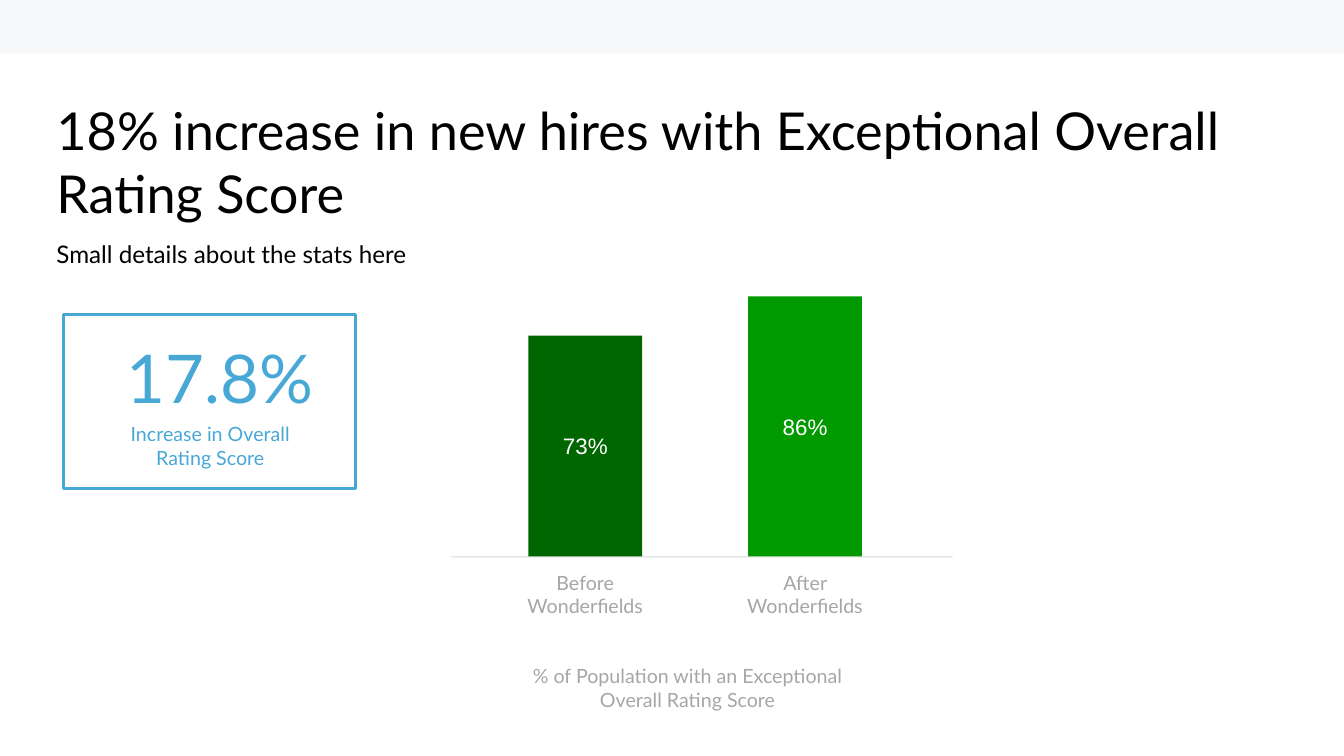
from dataclasses import dataclass

from pptx import Presentation
from pptx.dml.color import RGBColor
from pptx.enum.shapes import MSO_SHAPE
from pptx.enum.text import MSO_ANCHOR, MSO_AUTO_SIZE, PP_ALIGN
from pptx.shapes.base import BaseShape
from pptx.shapes.shapetree import _BaseGroupShapes
from pptx.text.text import TextFrame
from pptx.util import Inches, Pt

RECT = MSO_SHAPE.RECTANGLE
LEFT, CENTER = PP_ALIGN.LEFT, PP_ALIGN.CENTER
TOP, MIDDLE = MSO_ANCHOR.TOP, MSO_ANCHOR.MIDDLE
GROW, FIXED = MSO_AUTO_SIZE.SHAPE_TO_FIT_TEXT, MSO_AUTO_SIZE.NONE


@dataclass(frozen=True)
class Theme:
    font: str = "Lato"
    bar_font: str = "Arial"
    black: str = "000000"
    white: str = "FFFFFF"
    grey: str = "A6A6A6"
    blue: str = "47A8D6"
    band: str = "F7F8F9"
    axis: str = "D9D9D9"
    title_size: float = 37.3
    subtitle_size: float = 17.3
    stat_size: float = 48
    bar_size: float = 16
    label_size: float = 14


THEME = Theme()
PADDING = (0.13, 0.07)
BASELINE = 5.52
BAR_WIDTH = 1.13
FULL_BAR_HEIGHT = 3.0  # height of a 100% bar


@dataclass(frozen=True)
class Label:
    text: str
    box: tuple[float, float, float, float]
    size: float
    color: str
    align: PP_ALIGN = CENTER
    padding: tuple[float, float] = PADDING
    auto_size: MSO_AUTO_SIZE = GROW


@dataclass(frozen=True)
class Bar:
    name: str
    percent: int
    left: float
    color: str
    label_width: float


TITLE = Label("18% increase in new hires with Exceptional Overall Rating Score",
              (0.56, 0.98, 12.17, 0.84), THEME.title_size, THEME.black, LEFT, (0, 0), FIXED)
SUBTITLE = Label("Small details about the stats here",
                 (0.49, 2.3, 10.93, 0.44), THEME.subtitle_size, THEME.black, LEFT, (0.07, 0.07))
CHART_CAPTION = Label("% of Population with an Exceptional Overall Rating Score",
                      (4.92, 6.52, 3.8, 0.61), THEME.label_size, THEME.grey)
STAT_LABELS = (
    Label("17.8%", (1.13, 3.27, 2.27, 0.94), THEME.stat_size, THEME.blue, LEFT),
    Label("Increase in Overall Rating Score",
          (1.04, 4.12, 2.09, 0.61), THEME.label_size, THEME.blue),
)
BARS = (
    Bar("Before Wonderfields", 73, 5.24, "006600", 1.7),
    Bar("After Wonderfields", 86, 7.42, "009900", 1.47),
)


def rgb(color: str) -> RGBColor:
    return RGBColor.from_string(color)


def set_text(tf: TextFrame, text: str, size: float, color: str, font: str,
             align: PP_ALIGN, anchor: MSO_ANCHOR, padding: tuple[float, float]) -> None:
    tf.text = text
    tf.word_wrap = True
    tf.vertical_anchor = anchor
    tf.margin_left = tf.margin_right = Inches(padding[0])
    tf.margin_top = tf.margin_bottom = Inches(padding[1])
    p = tf.paragraphs[0]
    p.alignment = align
    r = p.runs[0]
    r.font.name = font
    r.font.size = Pt(size)
    r.font.color.rgb = rgb(color)


def add_label(shapes: _BaseGroupShapes, label: Label) -> None:
    tf = shapes.add_textbox(*map(Inches, label.box)).text_frame
    set_text(tf, label.text, label.size, label.color, THEME.font,
             label.align, TOP, label.padding)
    tf.auto_size = label.auto_size


def fill_plain(sp: BaseShape, color: str) -> None:
    sp.shadow.inherit = False
    sp.fill.solid()
    sp.fill.fore_color.rgb = rgb(color)
    sp.line.fill.background()


def add_axis(shapes: _BaseGroupShapes) -> None:
    points = [(4.5, 5.53), (9.46, 5.53), (9.44, BASELINE)]
    builder = shapes.build_freeform(Inches(4.46), Inches(BASELINE))
    builder.add_line_segments([(Inches(x), Inches(y)) for x, y in points], close=True)
    fill_plain(builder.convert_to_shape(), THEME.axis)


def add_bar(shapes: _BaseGroupShapes, bar: Bar) -> None:
    """Draw a bar standing on the baseline, with its name centred below."""
    height = FULL_BAR_HEIGHT * bar.percent / 100
    sp = shapes.add_shape(RECT, Inches(bar.left), Inches(BASELINE - height),
                          Inches(BAR_WIDTH), Inches(height))
    fill_plain(sp, bar.color)
    set_text(sp.text_frame, f"{bar.percent}%", THEME.bar_size, THEME.white,
             THEME.bar_font, CENTER, MIDDLE, PADDING)
    label_left = bar.left + (BAR_WIDTH - bar.label_width) / 2
    add_label(shapes, Label(bar.name, (label_left, 5.66, bar.label_width, 0.47),
                            THEME.label_size, THEME.grey, padding=(0, 0)))


def add_stat_card(shapes: _BaseGroupShapes) -> None:
    card = shapes.add_group_shape().shapes
    for label in STAT_LABELS:
        add_label(card, label)
    frame = card.add_shape(RECT, Inches(0.63), Inches(3.12), Inches(2.9), Inches(1.73))
    frame.shadow.inherit = False
    frame.fill.background()
    frame.line.color.rgb = rgb(THEME.blue)
    frame.line.width = Pt(2)


def main() -> None:
    prs = Presentation()
    prs.slide_width, prs.slide_height = Inches(13.33), Inches(7.5)
    s = prs.slides.add_slide(prs.slide_layouts[6])
    band = s.shapes.add_shape(RECT, 0, 0, prs.slide_width, Inches(0.53))
    fill_plain(band, THEME.band)
    add_axis(s.shapes)
    add_label(s.shapes, CHART_CAPTION)
    for bar in BARS:
        add_bar(s.shapes, bar)
    add_label(s.shapes, TITLE)
    add_label(s.shapes, SUBTITLE)
    add_stat_card(s.shapes)
    prs.save("out.pptx")


if __name__ == "__main__":
    main()
